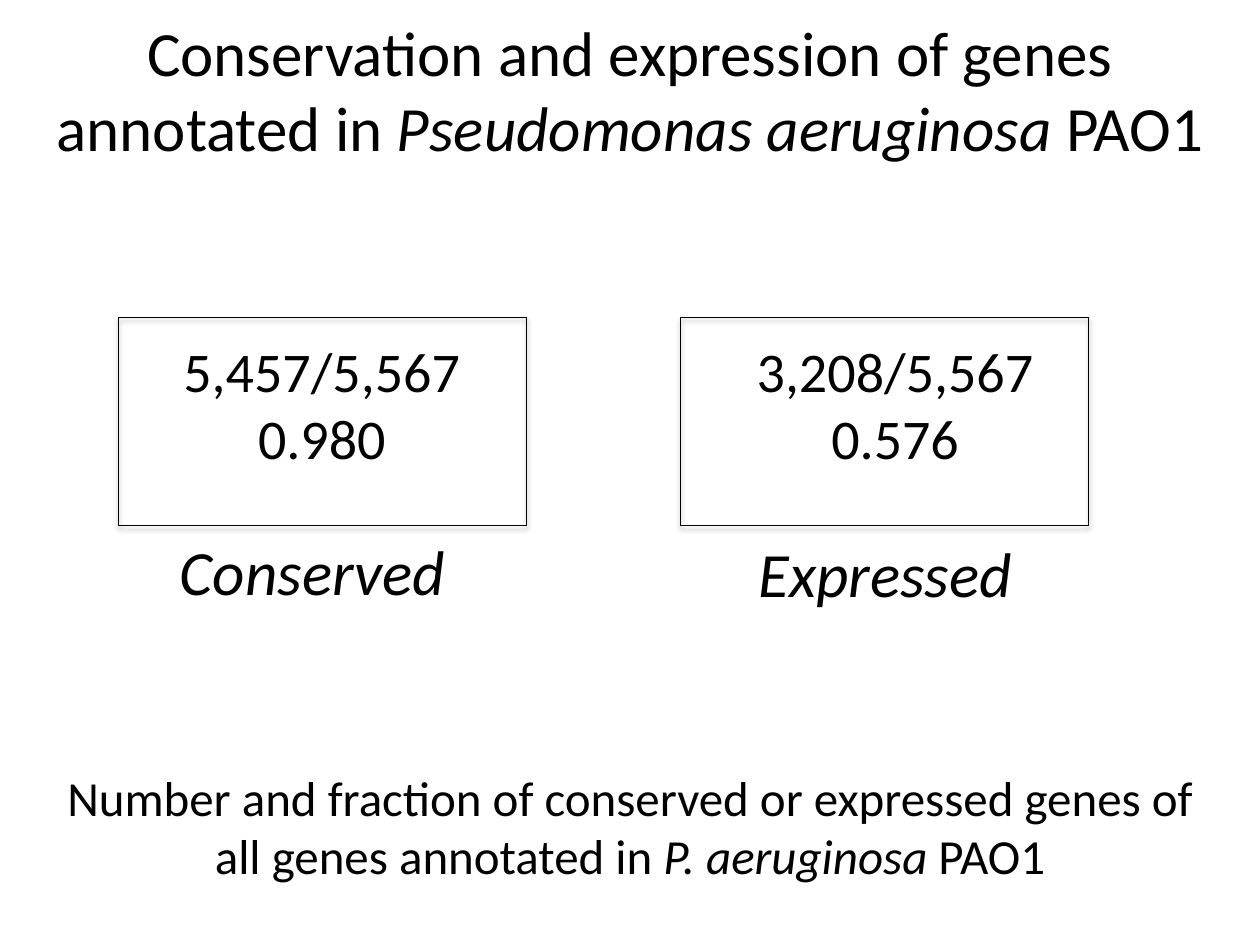
"""Build the slide on conserved and expressed genes in Pseudomonas aeruginosa."""
from lxml.etree import SubElement
from pptx import Presentation
from pptx.dml.color import RGBColor
from pptx.enum.shapes import MSO_SHAPE
from pptx.enum.text import MSO_ANCHOR, MSO_AUTO_SIZE, PP_ALIGN
from pptx.oxml.ns import qn
from pptx.util import Inches, Pt


def color(hex_code):
    return RGBColor.from_string(hex_code)


def add_text(box, runs, size, label=False):
    sp = s.shapes.add_textbox(*map(Inches, box))
    tf = sp.text_frame
    tf.word_wrap = not label
    tf.auto_size = MSO_AUTO_SIZE.SHAPE_TO_FIT_TEXT if label else MSO_AUTO_SIZE.NONE
    tf.vertical_anchor = MSO_ANCHOR.TOP if label else MSO_ANCHOR.MIDDLE
    p = tf.paragraphs[0]
    p.alignment = PP_ALIGN.LEFT if label else PP_ALIGN.CENTER
    for text, italic in runs:
        r = p.add_run()
        r.text = text
        r.font.name = "Calibri"
        r.font.size = Pt(size)
        r.font.italic = italic
        r.font.color.rgb = color("000000")


prs = Presentation()
prs.slide_width, prs.slide_height = Inches(10), Inches(7.5)
s = prs.slides.add_slide(prs.slide_layouts[6])

add_text((0, 0.16, 10, 1.09), [
    ("Conservation and expression of genes annotated in ", False),
    ("Pseudomonas aeruginosa ", True),
    ("PAO1", False),
], 36)

groups = [
    (0.94, 1.24, "5,457/5,567", "0.980", "Conserved", (1.33, 4.18, 2.44, 0.71)),
    (5.4, 5.79, "3,208/5,567", "0.576", "Expressed", (5.92, 4.19, 2.36, 0.71)),
]
for frame_x, text_x, count, fraction, label, label_box in groups:
    add_text((text_x, 3.12, 2.63, 0.69), [(fraction, False)], 32)
    add_text((text_x, 2.66, 2.63, 0.56), [(count, False)], 32)
    add_text(label_box, [(label, True)], 36, label=True)

    sp = s.shapes.add_shape(MSO_SHAPE.RECTANGLE, Inches(frame_x), Inches(2.52),
                            Inches(3.24), Inches(1.65))
    sp.fill.background()
    sp.line.color.rgb = color("000000")
    sp.line.width = Pt(0.75)
    sp.shadow.inherit = False
    effects = sp.element.spPr.find(qn("a:effectLst"))
    shadow = SubElement(effects, qn("a:outerShdw"), blurRad=str(Pt(3.1)),
                        dist=str(Pt(1.8)), dir="5400000", rotWithShape="0")
    shade = SubElement(shadow, qn("a:srgbClr"), val="000000")
    SubElement(shade, qn("a:alpha"), val="35000")

add_text((0.37, 6.21, 9.26, 0.69), [
    ("Number and fraction of conserved or expressed genes of all genes annotated in ", False),
    ("P. aeruginosa", True),
    (" PAO1", False),
], 28)

prs.save("out.pptx")
